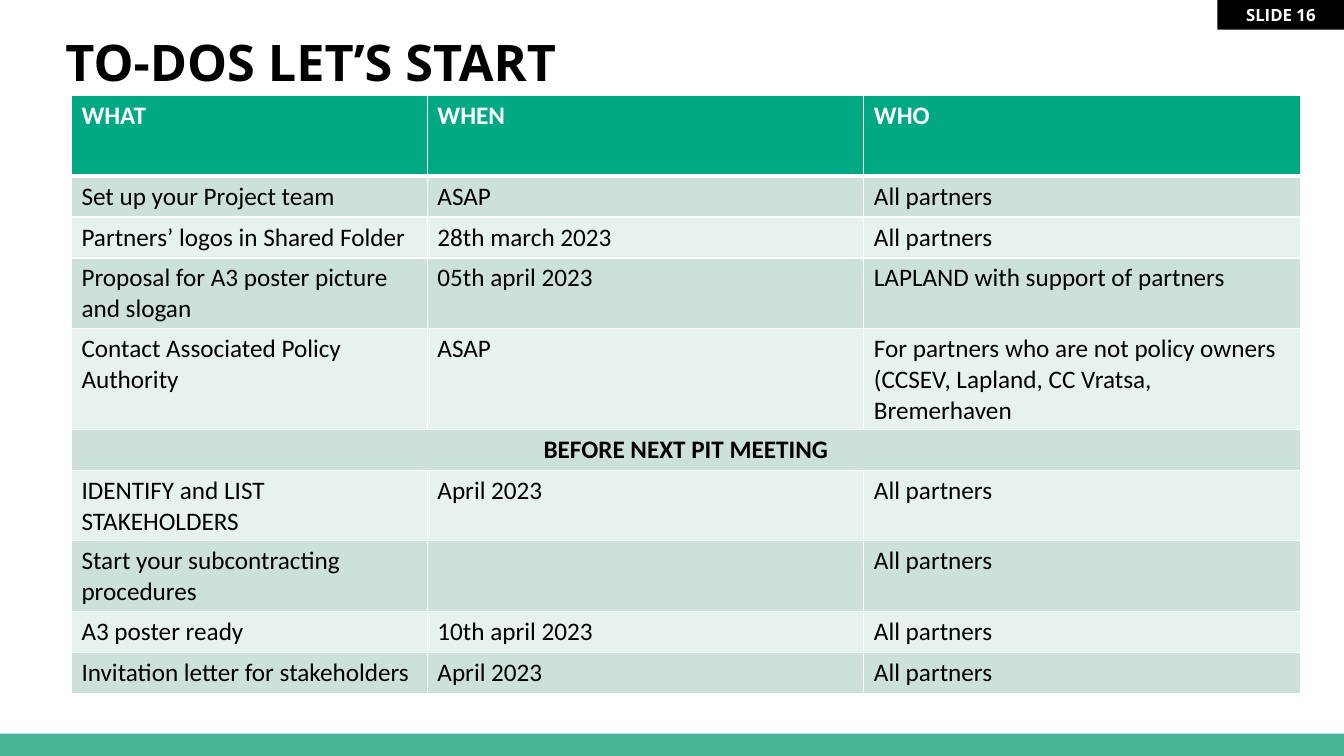
from lxml.etree import SubElement
from pptx import Presentation
from pptx.dml.color import RGBColor
from pptx.enum.shapes import MSO_SHAPE
from pptx.enum.text import MSO_ANCHOR, PP_ALIGN
from pptx.oxml.ns import qn
from pptx.util import Cm, Pt

HEADINGS = ("WHAT", "WHEN", "WHO")
SECTION = "BEFORE NEXT PIT MEETING"
TASKS = [
    ("Set up your Project team", "ASAP", "All partners"),
    ("Partners’ logos in Shared Folder", "28th march 2023", "All partners"),
    ("Proposal for A3 poster picture and slogan", "05th april 2023",
     "LAPLAND with support of partners"),
    ("Contact Associated Policy Authority", "ASAP",
     "For partners who are not policy owners (CCSEV, Lapland, CC Vratsa, Bremerhaven"),
    (SECTION, "", ""),
    ("IDENTIFY and LIST STAKEHOLDERS", "April 2023", "All partners"),
    ("Start your subcontracting procedures", "", "All partners"),
    ("A3 poster ready", "10th april 2023", "All partners"),
    ("Invitation letter for stakeholders", "April 2023", "All partners"),
]


def color(value):
    return RGBColor.from_string(value)


class SlideBuilder:
    heading_font = "Open Sans"
    table_font = "Calibri"
    white, black = "FFFFFF", "000000"
    footer_fill, header_fill = "4AB698", "01A884"
    band_fills = ("CCE1D9", "E7F1ED")

    def __init__(self, slide):
        self.slide = slide

    def style(self, para, font, size, ink, bold, align=PP_ALIGN.LEFT):
        para.alignment = align
        for span in para.runs:
            span.font.name = font
            span.font.size = Pt(size)
            span.font.bold = bold
            span.font.color.rgb = color(ink)

    def bar(self, left, top, width, height, fill, text=""):
        box = self.slide.shapes.add_shape(
            MSO_SHAPE.RECTANGLE, Cm(left), Cm(top), Cm(width), Cm(height))
        box.shadow.inherit = False
        box.fill.solid()
        box.fill.fore_color.rgb = color(fill)
        box.line.fill.background()
        if text:
            frame = box.text_frame
            frame.margin_top = frame.margin_bottom = 0
            frame.vertical_anchor = MSO_ANCHOR.MIDDLE
            frame.text = text
            self.style(frame.paragraphs[0], self.heading_font, 12, self.white,
                       True, PP_ALIGN.CENTER)

    def title(self, text, left, top, width, height):
        box = self.slide.shapes.add_textbox(Cm(left), Cm(top), Cm(width), Cm(height))
        frame = box.text_frame
        frame.word_wrap = True
        frame.text = text
        para = frame.paragraphs[0]
        para.line_spacing = 0.9
        self.style(para, self.heading_font, 36, self.black, True)

    def borders(self, cell, **widths):
        props = cell._tc.get_or_add_tcPr()
        for side in "LRTB":
            line = SubElement(props, qn(f"a:ln{side}"), w=str(Pt(widths.get(side, 1))))
            fill = SubElement(line, qn("a:solidFill"))
            SubElement(fill, qn("a:srgbClr"), val=self.white)

    def task_table(self, left, top, widths, header_height, row_height):
        rows = [HEADINGS, *TASKS]
        height = header_height + row_height * len(TASKS)
        table = self.slide.shapes.add_table(
            len(rows), len(widths), Cm(left), Cm(top),
            Cm(sum(widths)), Cm(height)).table
        for column, width in zip(table.columns, widths):
            column.width = Cm(width)
        for index, texts in enumerate(rows):
            header, section = index == 0, texts[0] == SECTION
            table.rows[index].height = Cm(header_height if header else row_height)
            fill = self.header_fill if header else self.band_fills[(index - 1) % 2]
            for cell, text in zip(table.rows[index].cells, texts):
                self.borders(cell, T=3 if index == 1 else 1, B=3 if header else 1)
                cell.fill.solid()
                cell.fill.fore_color.rgb = color(fill)
                cell.text = text
                para = cell.text_frame.paragraphs[0]
                para.font.size = Pt(18)
                self.style(para, self.table_font, 18,
                           self.white if header else self.black, header or section,
                           PP_ALIGN.CENTER if section else PP_ALIGN.LEFT)
            if section:
                table.cell(index, 0).merge(table.cell(index, len(widths) - 1))


def main():
    deck = Presentation()
    deck.slide_width, deck.slide_height = Cm(33.87), Cm(19.05)
    builder = SlideBuilder(deck.slides.add_slide(deck.slide_layouts[6]))
    builder.bar(0, 18.49, 33.87, 0.6, builder.footer_fill)
    builder.bar(30.68, -0.02, 3.2, 0.77, builder.black, "SLIDE 16")
    builder.title("TO-DOS LET’S START", 1.4, 0.84, 23.65, 1.83)
    builder.task_table(1.8, 2.41, (8.97, 11, 11), 2.03, 1.03)
    deck.save("out.pptx")


if __name__ == "__main__":
    main()
